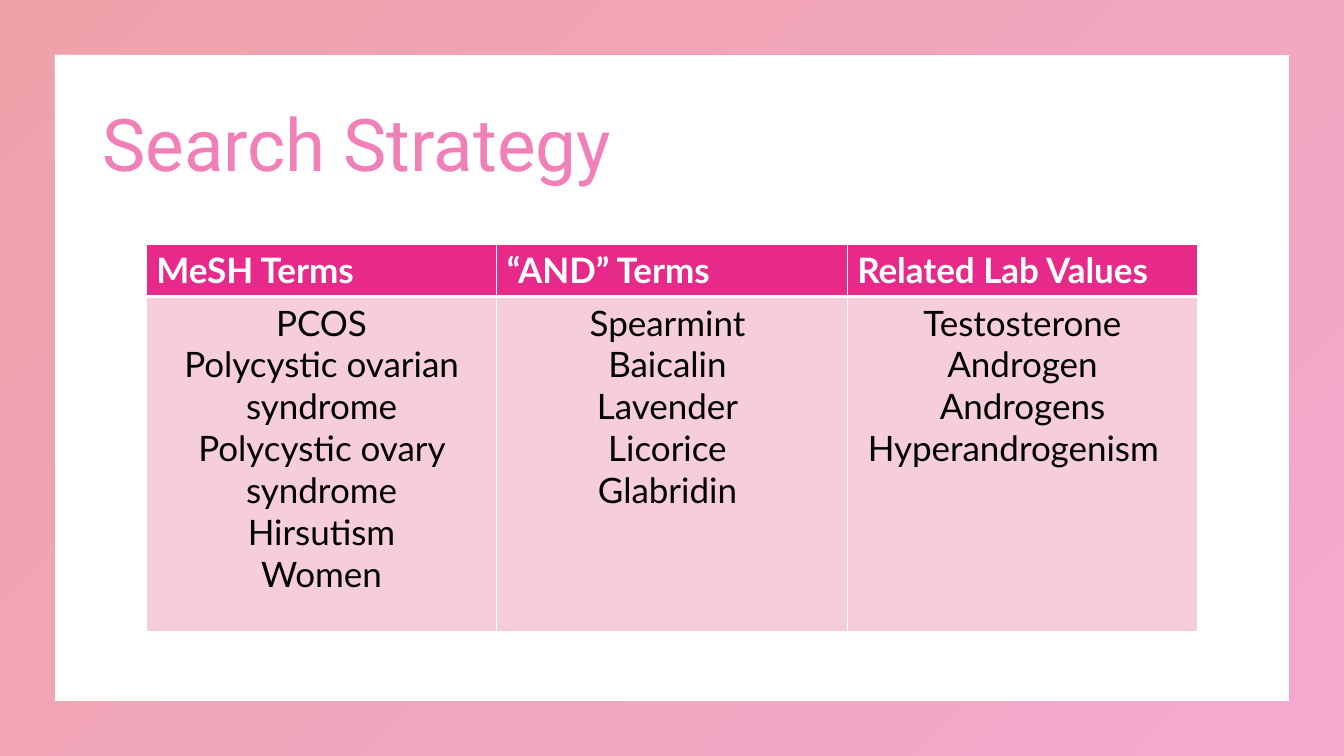
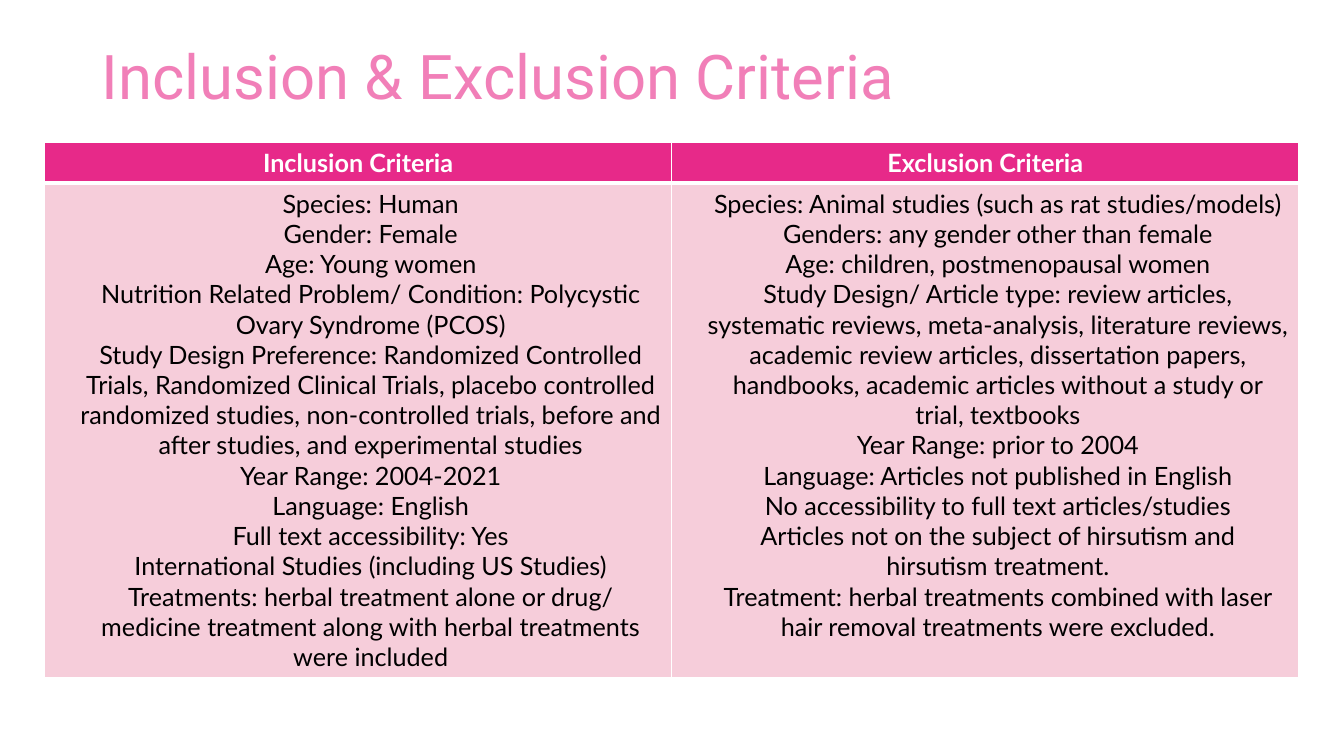
from dataclasses import dataclass

from lxml.etree import SubElement
from pptx import Presentation
from pptx.dml.color import RGBColor
from pptx.enum.shapes import MSO_SHAPE
from pptx.enum.text import MSO_ANCHOR, PP_ALIGN
from pptx.oxml.ns import qn
from pptx.util import Pt


@dataclass(frozen=True)
class Theme:
    title_font: str = "Roboto"
    body_font: str = "Lato"
    title: str = "F17FB8"
    header: str = "E72989"
    body: str = "F6CDDA"
    white: str = "FFFFFF"
    black: str = "000000"
    frame_start: str = "D51728"
    frame_end: str = "E72989"
    frame_opacity: int = 40
    title_size: int = 52
    small_title_size: int = 44
    table_size: int = 25
    small_table_size: int = 18
    border: int = 1
    header_rule: int = 3


THEME = Theme()
SLIDE_WIDTH, SLIDE_HEIGHT = 960, 540

SEARCH_TERMS = {
    "MeSH Terms": [
        "PCOS",
        "Polycystic ovarian syndrome",
        "Polycystic ovary syndrome",
        "Hirsutism",
        "Women",
    ],
    "“AND” Terms": ["Spearmint", "Baicalin", "Lavender", "Licorice", "Glabridin"],
    "Related Lab Values": ["Testosterone", "Androgen", "Androgens", "Hyperandrogenism"],
}
TERM_RIGHT_INDENTS = {"Spearmint": 6.5, "Hyperandrogenism": 13}

CRITERIA = {
    "Inclusion Criteria": [
        "Species: Human",
        "Gender: Female",
        "Age: Young women",
        "Nutrition Related Problem/ Condition: Polycystic Ovary Syndrome (PCOS)",
        "Study Design Preference: Randomized Controlled Trials, Randomized Clinical "
        "Trials, placebo controlled randomized studies, non-controlled trials, before "
        "and after studies, and experimental studies",
        "Year Range: 2004-2021",
        "Language: English",
        "Full text accessibility: Yes",
        "International Studies (including US Studies)",
        "Treatments: herbal treatment alone or drug/ medicine treatment along with "
        "herbal treatments were included",
    ],
    "Exclusion Criteria": [
        "Species: Animal studies (such as rat studies/models)",
        "Genders: any gender other than female",
        "Age: children, postmenopausal women",
        "Study Design/ Article type: review articles, systematic reviews, "
        "meta-analysis, literature reviews, academic review articles, dissertation "
        "papers, handbooks, academic articles without a study or trial, textbooks",
        "Year Range: prior to 2004",
        "Language: Articles not published in English",
        "No accessibility to full text articles/studies",
        "Articles not on the subject of hirsutism and hirsutism treatment.",
        "Treatment: herbal treatments combined with laser hair removal treatments "
        "were excluded.",
    ],
}


def rgb(color):
    return RGBColor.from_string(color)


def write(text_frame, lines, *, size, color, font=THEME.body_font, bold=False,
          align=PP_ALIGN.LEFT, indent=0, right_indents=None, line_spacing=None):
    """Write one paragraph for each line; right_indents maps a line to its indent."""
    for index, line in enumerate(lines):
        paragraph = text_frame.add_paragraph() if index else text_frame.paragraphs[0]
        paragraph.alignment = align
        paragraph.line_spacing = line_spacing
        right_indent = (right_indents or {}).get(line, 0)
        for name, margin in (("marL", indent), ("marR", right_indent)):
            if margin:
                paragraph._p.get_or_add_pPr().set(name, str(Pt(margin)))
        run = paragraph.add_run()
        run.text = line
        run.font.name = font
        run.font.size = Pt(size)
        run.font.bold = bold
        run.font.color.rgb = rgb(color)


def add_full_slide_shape(slide, preset):
    shape = slide.shapes.add_shape(
        preset, 0, 0, Pt(SLIDE_WIDTH), Pt(SLIDE_HEIGHT))
    shape.shadow.inherit = False
    shape.line.fill.background()
    return shape


def add_frame(slide):
    """Draw the translucent gradient border around the slide."""
    frame = add_full_slide_shape(slide, MSO_SHAPE.FRAME)
    frame.adjustments[0] = 0.072
    frame.fill.gradient()
    frame.fill.gradient_angle = 315
    colors = (THEME.frame_start, THEME.frame_end)
    for stop, color in zip(frame.fill.gradient_stops, colors):
        stop.color.rgb = rgb(color)
    for color_element in frame._element.spPr.iter(qn("a:srgbClr")):
        alpha = SubElement(color_element, qn("a:alpha"))
        alpha.set("val", str(THEME.frame_opacity * 1000))


def add_white_panel(slide):
    """Cover the frame so that a wide table can use the whole slide."""
    panel = add_full_slide_shape(slide, MSO_SHAPE.RECTANGLE)
    panel.fill.solid()
    panel.fill.fore_color.rgb = rgb(THEME.white)


def add_title(slide, text, left, top, width, height, *, size, anchor):
    text_frame = slide.shapes.add_textbox(
        Pt(left), Pt(top), Pt(width), Pt(height)).text_frame
    text_frame.word_wrap = True
    text_frame.vertical_anchor = anchor
    write(text_frame, [text], size=size, color=THEME.title,
          font=THEME.title_font, line_spacing=0.9)


def style_cell(cell, fill, **border_widths):
    """Fill a cell and give it white borders; keywords lnL to lnB set other widths."""
    properties = cell._tc.get_or_add_tcPr()
    for side in ("lnL", "lnR", "lnT", "lnB"):
        width = border_widths.get(side, THEME.border)
        line = SubElement(properties, qn(f"a:{side}"), w=str(Pt(width)))
        solid = SubElement(line, qn("a:solidFill"))
        SubElement(solid, qn("a:srgbClr"), val=THEME.white)
    cell.fill.solid()
    cell.fill.fore_color.rgb = rgb(fill)


def add_term_table(slide, columns, left, top, width, row_heights, *, size,
                   header_align=PP_ALIGN.LEFT, **body_format):
    """Add a table with one heading and one cell of centred lines per column."""
    table = slide.shapes.add_table(
        2, len(columns), Pt(left), Pt(top), Pt(width), Pt(sum(row_heights))).table
    table.horz_banding = False
    for row, height in zip(table.rows, row_heights):
        row.height = Pt(height)
    for index, (heading, lines) in enumerate(columns.items()):
        table.columns[index].width = Pt(width / len(columns))
        header, body = table.cell(0, index), table.cell(1, index)
        style_cell(header, THEME.header, lnB=THEME.header_rule)
        style_cell(body, THEME.body, lnT=THEME.header_rule)
        write(header.text_frame, [heading], size=size, color=THEME.white,
              bold=True, align=header_align)
        write(body.text_frame, lines, size=size, color=THEME.black,
              align=PP_ALIGN.CENTER, **body_format)


def build_search_strategy(slide):
    add_title(slide, "Search Strategy", 66, 53, 828, 105,
              size=THEME.title_size, anchor=MSO_ANCHOR.MIDDLE)
    add_term_table(slide, SEARCH_TERMS, 104.5, 174.6, 751, (36, 239),
                   size=THEME.table_size, right_indents=TERM_RIGHT_INDENTS)


def build_criteria(slide):
    add_white_panel(slide)
    add_title(slide, "Inclusion & Exclusion Criteria", 65.8, 29.5, 737, 177,
              size=THEME.small_title_size, anchor=MSO_ANCHOR.TOP)
    add_term_table(slide, CRITERIA, 31.8, 102, 896, (28.8, 352.8),
                   size=THEME.small_table_size, header_align=PP_ALIGN.CENTER,
                   indent=18)


def main():
    presentation = Presentation()
    presentation.slide_width = Pt(SLIDE_WIDTH)
    presentation.slide_height = Pt(SLIDE_HEIGHT)
    blank_layout = presentation.slide_layouts[6]
    for build in (build_search_strategy, build_criteria):
        slide = presentation.slides.add_slide(blank_layout)
        add_frame(slide)
        build(slide)
    presentation.save("out.pptx")


if __name__ == "__main__":
    main()
